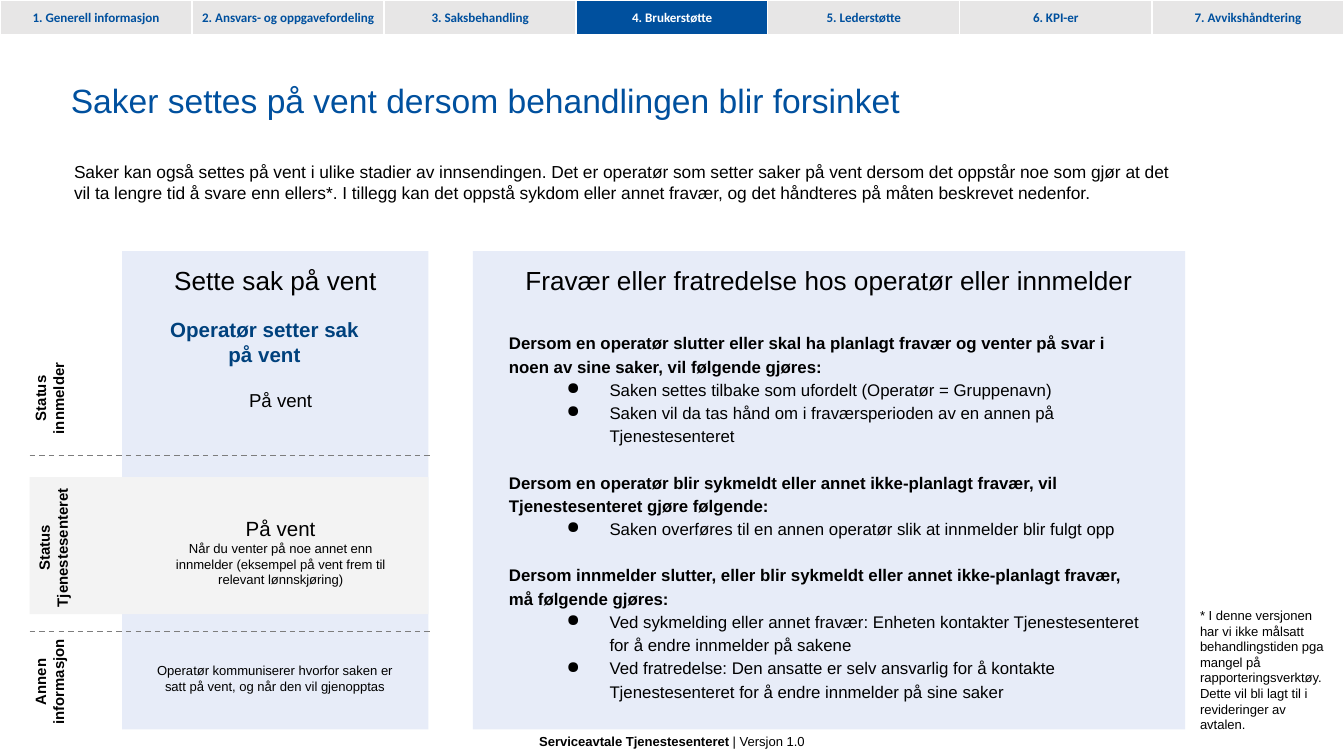
from lxml.etree import SubElement
from pptx import Presentation
from pptx.dml.color import RGBColor
from pptx.enum.dml import MSO_LINE
from pptx.enum.shapes import MSO_CONNECTOR, MSO_SHAPE
from pptx.enum.text import MSO_ANCHOR as Anchor, PP_ALIGN as Align
from pptx.oxml.ns import qn
from pptx.util import Cm, Pt

BLUE = RGBColor(0x00, 0x50, 0x9E)
DARK_BLUE = RGBColor(0x00, 0x41, 0x7D)
PANEL = RGBColor(0xCF, 0xDA, 0xF1)
TAB_GREY = RGBColor(0xE7, 0xE6, 0xE6)
BAND_GREY = RGBColor(0xF3, 0xF3, 0xF3)
DASH_GREY = RGBColor(0x7D, 0x7D, 0x7D)
BLACK = RGBColor(0, 0, 0)
WHITE = RGBColor(0xFF, 0xFF, 0xFF)

WIDTH, HEIGHT = 25.4, 14.29
PANEL_TOP, PANEL_HEIGHT = 4.75, 9.04
TEXT_LEFT = 2.97
BAND_LEFT = 0.56

TABS = ["1. Generell informasjon", "2. Ansvars- og oppgavefordeling", "3. Saksbehandling",
        "4. Brukerstøtte", "5. Lederstøtte", "6. KPI-er", "7. Avvikshåndtering"]
ACTIVE_TAB = 3

ROW_LABELS = [
    (0.93, 7.53, "Status", "innmelder"),
    (1.0, 10.35, "Status", "Tjenestesenteret"),
    (0.93, 12.89, "Annen", "informasjon"),
]

ABSENCE_RULES = [
    ("Dersom en operatør slutter eller skal ha planlagt fravær og venter på svar i noen av sine "
     "saker, vil følgende gjøres:",
     ["Saken settes tilbake som ufordelt (Operatør = Gruppenavn)",
      "Saken vil da tas hånd om i fraværsperioden av en annen på Tjenestesenteret"]),
    ("Dersom en operatør blir sykmeldt eller annet ikke-planlagt fravær, vil Tjenestesenteret "
     "gjøre følgende:",
     ["Saken overføres til en annen operatør slik at innmelder blir fulgt opp"]),
    ("Dersom innmelder slutter, eller blir sykmeldt eller annet ikke-planlagt fravær, må følgende "
     "gjøres:",
     ["Ved sykmelding eller annet fravær: Enheten kontakter Tjenestesenteret for å endre "
      "innmelder på sakene",
      "Ved fratredelse: Den ansatte er selv ansvarlig for å kontakte Tjenestesenteret for å endre "
      "innmelder på sine saker"]),
]


def write_text(shape, *runs, size=9, bold=False, color=BLACK, font="Arial", align=Align.LEFT,
               spacing=None, before=None, bullet=None):
    frame = shape.text_frame
    paragraph = frame.paragraphs[0] if not frame.text else frame.add_paragraph()
    paragraph.alignment = align
    if spacing:
        paragraph.line_spacing = spacing
    if before:
        paragraph.space_before = Pt(before)
    if bullet:
        properties = paragraph._p.get_or_add_pPr()
        properties.set("marL", str(Cm(1.9)))
        properties.set("indent", str(Cm(-0.81)))
        SubElement(properties, qn("a:buChar"), char=bullet)
    for text in runs:
        run = paragraph.add_run()
        run.text = text
        run.font.name = font
        run.font.size = Pt(size)
        run.font.bold = bold and text == runs[0]
        run.font.color.rgb = color


class SlideBuilder:
    def __init__(self, slide):
        self.slide = slide

    def set_frame(self, shape, margins, anchor):
        frame = shape.text_frame
        frame.word_wrap = True
        frame.vertical_anchor = anchor
        frame.margin_left = frame.margin_right = Cm(margins[0])
        frame.margin_top = frame.margin_bottom = Cm(margins[1])

    def rectangle(self, left, top, width, height, fill, line=None, opacity=None,
                  margins=(0.25, 0.25), anchor=Anchor.TOP):
        shape = self.slide.shapes.add_shape(
            MSO_SHAPE.RECTANGLE, Cm(left), Cm(top), Cm(width), Cm(height))
        shape.shadow.inherit = False
        shape.fill.solid()
        shape.fill.fore_color.rgb = fill
        if opacity:
            color = shape._element.spPr.find(qn("a:solidFill"))[0]
            SubElement(color, qn("a:alpha"), val=str(opacity * 1000))
        if line:
            shape.line.color.rgb = line
            shape.line.width = Pt(0.75)
        else:
            shape.line.fill.background()
        self.set_frame(shape, margins, anchor)
        return shape

    def text_box(self, left, top, width, height, margins=(0, 0), anchor=Anchor.TOP, rotation=0):
        shape = self.slide.shapes.add_textbox(Cm(left), Cm(top), Cm(width), Cm(height))
        shape.rotation = rotation
        self.set_frame(shape, margins, anchor)
        return shape

    def dashed_line(self, left, right, y):
        line = self.slide.shapes.add_connector(
            MSO_CONNECTOR.STRAIGHT, Cm(left), Cm(y), Cm(right), Cm(y))
        line.line.color.rgb = DASH_GREY
        line.line.width = Pt(0.75)
        line.line.dash_style = MSO_LINE.DASH
        SubElement(line._element.spPr, qn("a:effectLst"))

    def tab(self, index, text, active):
        width = WIDTH / len(TABS)
        shape = self.rectangle(round(index * width, 2), 0, round(width, 2), 0.66,
                               BLUE if active else TAB_GREY, line=WHITE,
                               margins=(0, 0.13), anchor=Anchor.MIDDLE)
        write_text(shape, text, size=7, bold=True, font="Calibri", align=Align.CENTER,
                   color=WHITE if active else BLUE)

    def panel(self, left, width, heading):
        shape = self.rectangle(left, PANEL_TOP, width, PANEL_HEIGHT, PANEL, opacity=49)
        write_text(shape, heading, size=14, align=Align.CENTER)

    def row_label(self, center_x, center_y, *lines):
        width, height = 3.07, 0.38
        shape = self.text_box(center_x - width / 2, center_y - height / 2, width, height,
                              anchor=Anchor.MIDDLE, rotation=270)
        for line in lines:
            write_text(shape, line, size=8, bold=True, align=Align.CENTER)


def main():
    presentation = Presentation()
    presentation.slide_width = Cm(WIDTH)
    presentation.slide_height = Cm(HEIGHT)
    builder = SlideBuilder(presentation.slides.add_slide(presentation.slide_layouts[6]))

    footer = builder.text_box(0, 13.72, WIDTH, 0.58, (0.25, 0.25), Anchor.MIDDLE)
    write_text(footer, "Serviceavtale Tjenestesenteret", " | Versjon 1.0", size=7, bold=True,
               align=Align.CENTER)
    for index, text in enumerate(TABS):
        builder.tab(index, text, index == ACTIVE_TAB)

    title = builder.text_box(1.09, 1.22, 23.47, 1.35, (0.25, 0.13), Anchor.MIDDLE)
    write_text(title, "Saker settes på vent dersom behandlingen blir forsinket", size=18,
               color=BLUE)
    intro = builder.text_box(1.4, 3.05, 21.01, 0.66)
    write_text(intro, "Saker kan også settes på vent i ulike stadier av innsendingen. Det er "
               "operatør som setter saker på vent dersom det oppstår noe som gjør at det vil ta "
               "lengre tid å svare enn ellers*. I tillegg kan det oppstå sykdom eller annet "
               "fravær, og det håndteres på måten beskrevet nedenfor.", size=9.3)

    builder.panel(2.31, 5.79, "Sette sak på vent")
    builder.rectangle(BAND_LEFT, 9.02, 7.54, 2.59, BAND_GREY)
    operator = builder.text_box(TEXT_LEFT, 5.99, 4.06, 0.51)
    write_text(operator, "Operatør setter sak på vent", size=11, bold=True, color=DARK_BLUE,
               align=Align.CENTER)
    reporter_status = builder.text_box(TEXT_LEFT, 7.14, 4.67, 0.53, (0.25, 0.25))
    write_text(reporter_status, "På vent", size=10, align=Align.CENTER)
    center_status = builder.text_box(TEXT_LEFT, 9.5, 4.67, 0.53, (0.25, 0.25))
    write_text(center_status, "På vent", size=11, align=Align.CENTER)
    write_text(center_status, "Når du venter på noe annet enn innmelder (eksempel på vent frem "
               "til relevant lønnskjøring)", size=7, align=Align.CENTER)
    other_info = builder.text_box(TEXT_LEFT, 12.5, 4.45, 0.64, anchor=Anchor.MIDDLE)
    write_text(other_info, "Operatør kommuniserer hvorfor saken er satt på vent, og når den vil "
               "gjenopptas", size=7, align=Align.CENTER)
    for y in (8.61, 11.94):
        builder.dashed_line(BAND_LEFT, 8.13, y)
    for label in ROW_LABELS:
        builder.row_label(*label)

    builder.panel(8.94, 13.46, "Fravær eller fratredelse hos operatør eller innmelder")
    rules = builder.text_box(9.37, 5.99, 12.5, 7.42, (0.25, 0.25))
    for index, (situation, actions) in enumerate(ABSENCE_RULES):
        write_text(rules, situation, bold=True, spacing=1.15, before=12.4 if index else None)
        for action in actions:
            write_text(rules, action, spacing=1.15, bullet="●")

    footnote = builder.text_box(22.43, 11.35, 2.84, 2.64, (0.25, 0.13))
    write_text(footnote, "* I denne versjonen har vi ikke målsatt behandlingstiden pga mangel på "
               "rapporteringsverktøy. Dette vil bli lagt til i revideringer av avtalen.", size=7)

    presentation.save("out.pptx")


if __name__ == "__main__":
    main()
